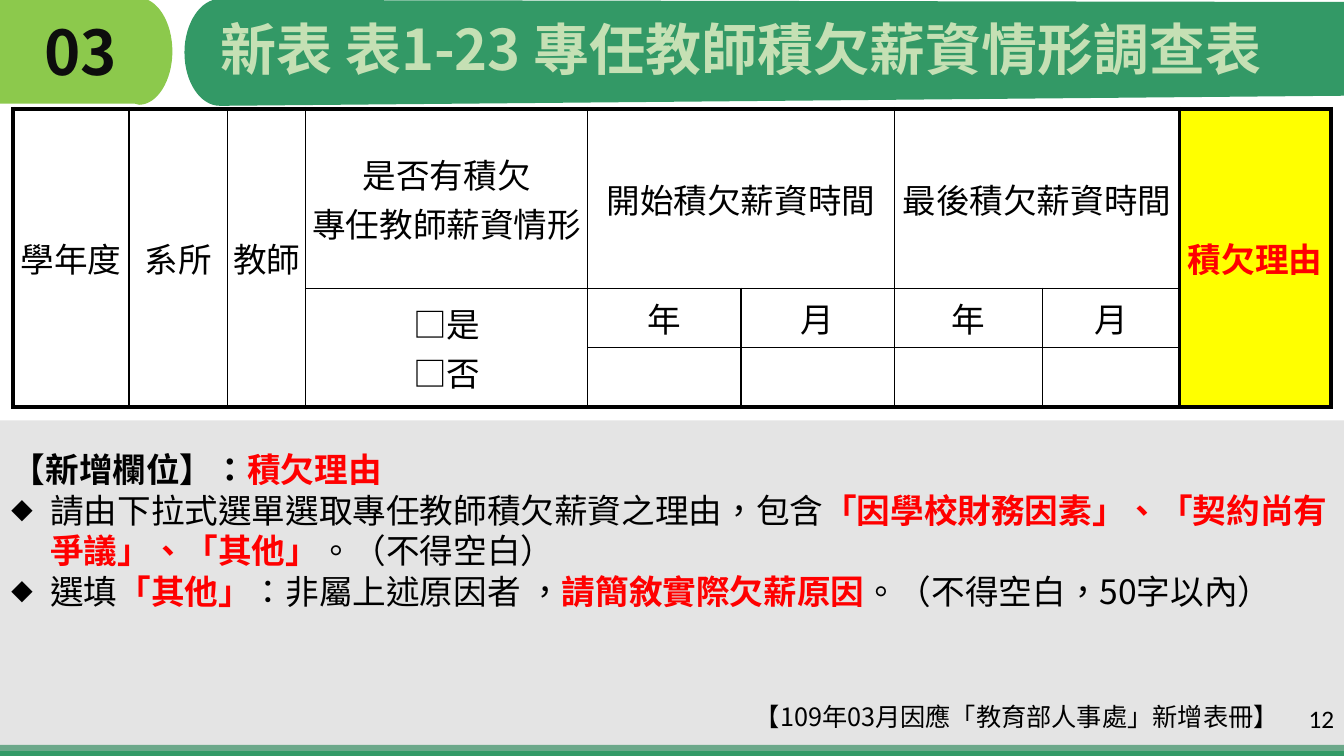
from dataclasses import dataclass
from itertools import product

from lxml.etree import SubElement
from pptx import Presentation
from pptx.dml.color import RGBColor
from pptx.enum.shapes import MSO_SHAPE
from pptx.enum.text import MSO_ANCHOR, PP_ALIGN
from pptx.oxml import parse_xml
from pptx.oxml.ns import nsdecls, qn
from pptx.util import Inches, Pt


@dataclass(frozen=True)
class Theme:
    """Colours, fonts and type sizes of the slide."""
    lime: str = "8CC94C"
    green: str = "339966"
    mint: str = "C5E0B4"
    grey: str = "BFBFBF"
    ink: str = "0D0D0D"
    black: str = "000000"
    red: str = "FF0000"
    yellow: str = "FFFF00"
    font: str = "Noto Sans CJK SC"
    number_font: str = "Calibri"
    section_size: int = 44
    title_size: int = 40
    body_size: int = 24
    note_size: int = 18
    thin: int = 1
    thick: int = 3


THEME = Theme()
COLUMN_WIDTHS = [1.15, 0.98, 0.77, 2.8, 1.52, 1.52, 1.47, 1.36, 1.5]
ROW_HEIGHTS = [1.78, 0.59, 0.59]
CELLS = [
    (0, 0, 3, 1, ["學年度"]),
    (0, 1, 3, 1, ["系所"]),
    (0, 2, 3, 1, ["教師"]),
    (0, 3, 1, 1, ["是否有積欠", "專任教師薪資情形"]),
    (0, 4, 1, 2, ["開始積欠薪資時間"]),
    (0, 6, 1, 2, ["最後積欠薪資時間"]),
    (0, 8, 3, 1, ["積欠理由"]),
    (1, 3, 2, 1, ["□是", "□否"]),
    *[(1, column, 1, 1, [label]) for column, label in enumerate("年月年月", 4)],
    *[(2, column, 1, 1, []) for column in range(4, 8)],
]
HEADING = [("【新增欄位】：", THEME.black, True), ("積欠理由", THEME.red, True)]
RULES = [
    [("請由下拉式選單選取專任教師積欠薪資之理由，包含", THEME.black, False),
     ("「因學校財務因素」、「契約尚有爭議」、「其他」", THEME.red, True),
     ("。（不得空白）", THEME.black, False)],
    [("選填", THEME.black, False),
     ("「其他」", THEME.red, True),
     ("：非屬上述原因者 ，", THEME.black, False),
     ("請簡敘實際欠薪原因", THEME.red, True),
     ("。（不得空白，50字以內）", THEME.black, False)],
]


def apply_format(target, values):
    """Set each named attribute on the target."""
    for name, value in values.items():
        setattr(target, name, value)


def add_span(para, text, size, color=THEME.black, bold=False, font=THEME.font):
    """Add one formatted run to a paragraph."""
    span = para.add_run()
    span.text = text
    apply_format(span.font, {"size": Pt(size), "bold": bold, "name": font})
    span.font.color.rgb = RGBColor.from_string(color)
    properties = span.font._element
    properties.set("lang", "zh-TW")
    SubElement(properties, qn("a:ea"), typeface=font)


def add_box(page, left, top, width, height, anchor=MSO_ANCHOR.TOP):
    """Add a wrapping text box and return its text frame."""
    box = page.shapes.add_textbox(Inches(left), Inches(top), Inches(width), Inches(height))
    apply_format(box.text_frame, {"word_wrap": True, "vertical_anchor": anchor})
    return box.text_frame


def add_label(page, frame_values, text, size, color=THEME.black, bold=False,
              font=THEME.font, anchor=MSO_ANCHOR.TOP, **layout):
    """Add a text box that holds a single line."""
    para = add_box(page, *frame_values, anchor=anchor).paragraphs[0]
    apply_format(para, layout)
    add_span(para, text, size, color, bold, font)


def paint(shape, color, opacity=100):
    """Give a shape a plain fill without line or shadow."""
    shape.shadow.inherit = False
    shape.line.fill.background()
    shape.fill.solid()
    shape.fill.fore_color.rgb = RGBColor.from_string(color)
    if opacity < 100:
        tone = shape._element.spPr.find(f".//{qn('a:srgbClr')}")
        SubElement(tone, qn("a:alpha"), val=str(opacity * 1000))


def add_band(page, top, height, color, opacity=100):
    """Add a full-width rectangle."""
    band = page.shapes.add_shape(MSO_SHAPE.RECTANGLE, 0, Inches(top), Inches(13.33), Inches(height))
    paint(band, color, opacity)


def curve(start, first, second, end, steps=16):
    """Return points along a cubic curve."""
    points = []
    for step in range(steps + 1):
        t = step / steps
        weights = ((1 - t) ** 3, 3 * t * (1 - t) ** 2, 3 * t * t * (1 - t), t ** 3)
        controls = (start, first, second, end)
        points.append(tuple(sum(w * p[axis] for w, p in zip(weights, controls))
                            for axis in (0, 1)))
    return points


def add_tab(page, points, color):
    """Add a filled outline through points given in inches."""
    corners = [(Inches(x), Inches(y)) for x, y in points]
    builder = page.shapes.build_freeform(*corners[0])
    builder.add_line_segments(corners[1:], close=True)
    paint(builder.convert_to_shape(), color)


def add_header(page):
    """Add the section tab and the title banner."""
    section = (curve((1.38, -0.02), (1.56, -0.02), (1.71, 0.22), (1.71, 0.51))
               + curve((1.71, 0.51), (1.71, 0.8), (1.56, 1.04), (1.38, 1.04))
               + [(1.34, 1.03), (0, 1.03), (0, -0.01), (1.34, -0.01)])
    banner = (curve((2.18, 1.05), (1.99, 1.05), (1.83, 0.82), (1.83, 0.52))
              + curve((1.83, 0.52), (1.83, 0.23), (1.99, -0.01), (2.18, -0.01))
              + [(2.22, 0), (13.33, 0.02), (13.33, 0.95), (2.22, 1.05)])
    add_tab(page, section, THEME.lime)
    add_tab(page, banner, THEME.green)
    add_label(page, (0.34, 0.17, 1.37, 1.45), "03", THEME.section_size, THEME.ink, True,
              line_spacing=0.9)
    add_label(page, (2.09, 0.17, 11.07, 0.82), "新表 表1-23 專任教師積欠薪資情形調查表",
              THEME.title_size, THEME.mint, True, line_spacing=0.9)


def set_borders(cell, weights):
    """Draw the left, right, top and bottom borders of a cell."""
    properties = cell._tc.get_or_add_tcPr()
    for index, (side, weight) in enumerate(zip("LRTB", weights)):
        properties.insert(index, parse_xml(
            f'<a:ln{side} {nsdecls("a")} w="{Pt(weight)}"><a:solidFill>'
            f'<a:srgbClr val="{THEME.black}"/></a:solidFill></a:ln{side}>'))


def fill_cell(table, row, column, row_span, column_span, lines):
    """Merge, colour, border and write one block of the table."""
    cell = table.cell(row, column)
    last_row, last_column = row + row_span, column + column_span
    if row_span * column_span > 1:
        cell.merge(table.cell(last_row - 1, last_column - 1))
    is_reason = column == 8
    edges = (column in (0, 8), last_column in (8, 9), row == 0, last_row == 3)
    weights = [THEME.thick if edge else THEME.thin for edge in edges]
    for position in product(range(row, last_row), range(column, last_column)):
        part = table.cell(*position)
        part.fill.background()
        if is_reason:
            part.fill.solid()
            part.fill.fore_color.rgb = RGBColor.from_string(THEME.yellow)
        set_borders(part, weights)
    apply_format(cell, {"vertical_anchor": MSO_ANCHOR.MIDDLE, "margin_left": Inches(0.02),
                        "margin_right": Inches(0.02), "margin_top": 0, "margin_bottom": 0})
    for index, line in enumerate(lines):
        para = cell.text_frame.add_paragraph() if index else cell.text_frame.paragraphs[0]
        para.alignment = PP_ALIGN.CENTER
        add_span(para, line, THEME.body_size, THEME.red if is_reason else THEME.black, is_reason)


def add_survey_table(page):
    """Add the salary arrears table."""
    table = page.shapes.add_table(
        len(ROW_HEIGHTS), len(COLUMN_WIDTHS), Inches(0.13), Inches(1.08),
        Inches(sum(COLUMN_WIDTHS)), Inches(sum(ROW_HEIGHTS))).table
    apply_format(table, {"first_row": False, "horz_banding": False})
    for column, width in zip(table.columns, COLUMN_WIDTHS):
        column.width = Inches(width)
    for row, height in zip(table.rows, ROW_HEIGHTS):
        row.height = Inches(height)
    for block in CELLS:
        fill_cell(table, *block)


def add_rules(page):
    """Add the heading and the bulleted filling rules."""
    frame = add_box(page, 0.02, 4.2, 13.32, 2.7)
    for index, spans in enumerate([HEADING, *RULES]):
        para = frame.add_paragraph() if index else frame.paragraphs[0]
        para.line_spacing = Pt(29 if index else 43.5)
        if index:
            properties = para._p.get_or_add_pPr()
            properties.set("marL", str(Inches(0.38)))
            properties.set("indent", str(-Inches(0.38)))
            SubElement(properties, qn("a:buSzPct"), val="65000")
            SubElement(properties, qn("a:buFont"), typeface=THEME.font)
            SubElement(properties, qn("a:buChar"), char="◆")
        for text, color, bold in spans:
            add_span(para, text, THEME.body_size, color, bold)


def main():
    """Build the slide and save it."""
    deck = Presentation()
    apply_format(deck, {"slide_width": Inches(13.33), "slide_height": Inches(7.5)})
    page = deck.slides.add_slide(deck.slide_layouts[6])
    add_header(page)
    add_band(page, 7.39, 0.12, THEME.green)
    add_band(page, 4.17, 3.28, THEME.grey, opacity=41)
    add_label(page, (10.33, 6.93, 3, 0.4), "12", THEME.note_size, font=THEME.number_font,
              anchor=MSO_ANCHOR.MIDDLE, alignment=PP_ALIGN.RIGHT)
    add_rules(page)
    add_label(page, (6.78, 6.9, 6, 0.4), "【109年03月因應「教育部人事處」新增表冊】",
              THEME.note_size, alignment=PP_ALIGN.RIGHT, line_spacing=Pt(22))
    add_survey_table(page)
    deck.save("out.pptx")


if __name__ == "__main__":
    main()
